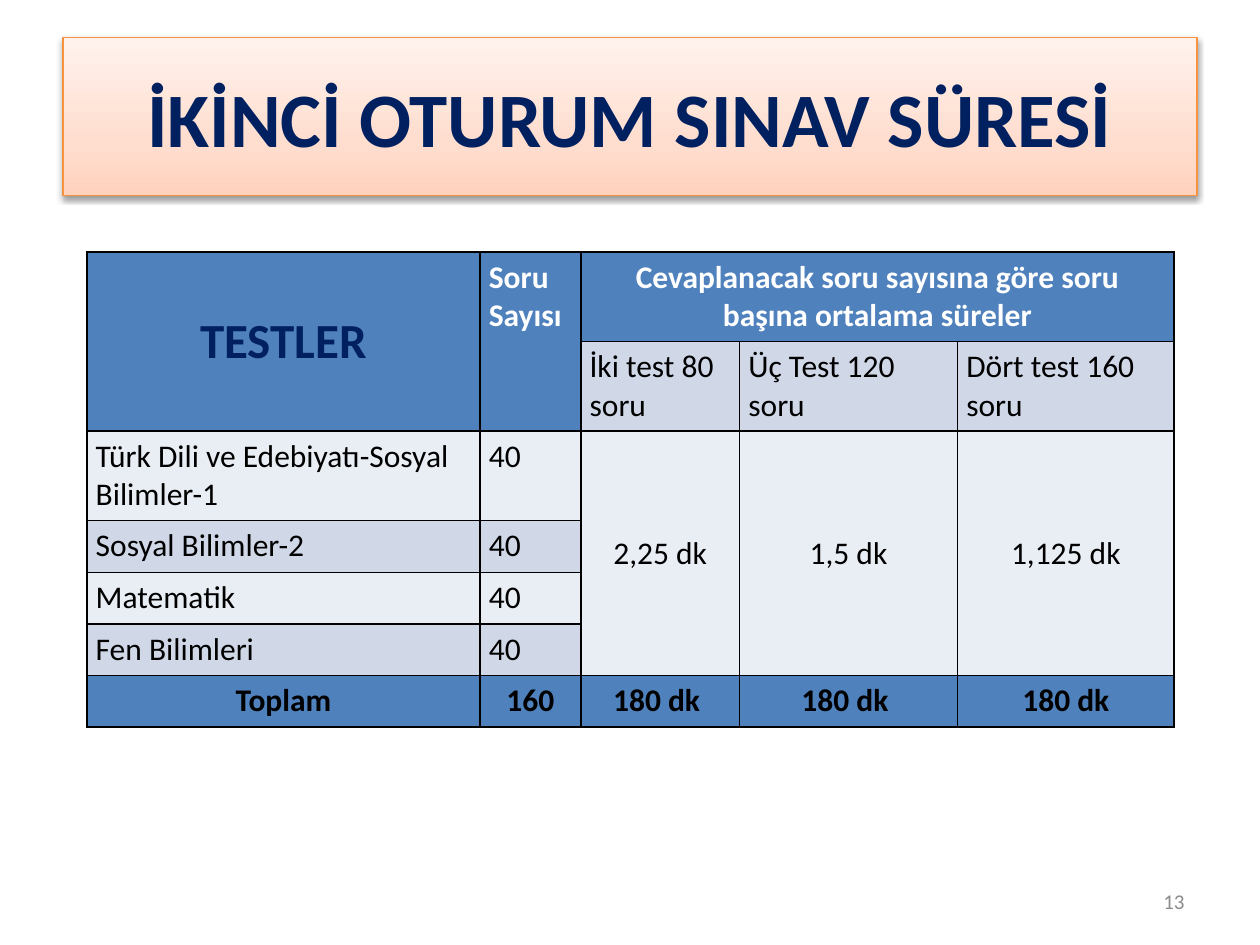
from lxml import etree
from pptx import Presentation
from pptx.dml.color import RGBColor
from pptx.enum.text import MSO_ANCHOR, PP_ALIGN
from pptx.oxml import parse_xml
from pptx.oxml.ns import nsdecls, qn
from pptx.util import Inches, Pt

LEFT, CENTER, RIGHT = PP_ALIGN.LEFT, PP_ALIGN.CENTER, PP_ALIGN.RIGHT
TOP, MIDDLE = MSO_ANCHOR.TOP, MSO_ANCHOR.MIDDLE
FONT = "Calibri"
COLORS = {
    "navy": "002060", "header": "4F81BD", "dark_band": "D0D8E8",
    "light_band": "E9EDF4", "white": "FFFFFF", "black": "000000",
    "orange": "F69240", "gray": "8C8C8C",
}
TITLE = "İKİNCİ OTURUM SINAV SÜRESİ"
TITLE_STOPS = [(0, "FFD2BD"), (35, "FFDED0"), (100, "FFF2ED")]
PAGE_NUMBER = "13"

ROWS = [
    ["TESTLER", "Soru Sayısı",
     "Cevaplanacak soru sayısına göre soru başına ortalama süreler", None, None],
    [None, None, "İki test 80 soru", "Üç Test 120 soru", "Dört test 160 soru"],
    ["Türk Dili ve Edebiyatı-Sosyal Bilimler-1", "40",
     "2,25 dk", "1,5 dk", "1,125 dk"],
    ["Sosyal Bilimler-2", "40", None, None, None],
    ["Matematik", "40", None, None, None],
    ["Fen Bilimleri", "40", None, None, None],
    ["Toplam", "160", "180 dk ", "180 dk ", "180 dk"],
]
MERGES = [((0, 0), (1, 0)), ((0, 1), (1, 1)), ((0, 2), (0, 4))]
MERGES += [((2, col), (5, col)) for col in (2, 3, 4)]
COL_WIDTHS = [3.12, 0.8, 1.26, 1.73, 1.72]
ROW_HEIGHTS = [0.71] * 3 + [0.41] * 4
LAST = len(ROWS) - 1


def add_text(tf, text, size, color, bold=False, align=LEFT):
    p = tf.paragraphs[0]
    p.alignment = align
    r = p.add_run()
    r.text = text
    r.font.name = FONT
    r.font.size = Pt(size)
    r.font.bold = bold
    r.font.color.rgb = RGBColor.from_string(COLORS[color])


def add_borders(cell):
    tcPr = cell._tc.get_or_add_tcPr()
    for side in ("lnL", "lnR", "lnT", "lnB"):
        ln = etree.SubElement(tcPr, qn(f"a:{side}"), w=str(Pt(1)))
        fill = etree.SubElement(ln, qn("a:solidFill"))
        etree.SubElement(fill, qn("a:srgbClr"), val=COLORS["black"])


def cell_style(row, col):
    if (row, col) == (0, 0):
        return "header", 28, "navy", True, CENTER, MIDDLE
    if row == 0:
        return "header", 18, "white", True, CENTER if col == 2 else LEFT, TOP
    if row == LAST:
        return "header", 18, "black", True, CENTER, TOP
    band = "dark_band" if row % 2 else "light_band"
    if row > 1 and col > 1:
        return band, 18, "black", False, CENTER, MIDDLE
    return band, 18, "black", False, LEFT, TOP


def format_title(s):
    s.left, s.top, s.width, s.height = map(Inches, (0.5, 0.3, 9, 1.25))
    stops = "".join(
        f'<a:gs pos="{pos * 1000}"><a:srgbClr val="{color}"/></a:gs>'
        for pos, color in TITLE_STOPS)
    spPr = s._element.spPr
    spPr.append(parse_xml(
        f'<a:gradFill {nsdecls("a")} rotWithShape="1"><a:gsLst>{stops}</a:gsLst>'
        '<a:lin ang="16200000" scaled="1"/></a:gradFill>'))
    s.line.color.rgb = RGBColor.from_string(COLORS["orange"])
    s.line.width = Pt(0.75)
    spPr.append(parse_xml(
        f'<a:effectLst {nsdecls("a")}><a:outerShdw blurRad="{Pt(3.1)}" '
        f'dist="{Pt(1.6)}" dir="5400000" rotWithShape="0">'
        f'<a:srgbClr val="{COLORS["black"]}"><a:alpha val="38000"/></a:srgbClr>'
        '</a:outerShdw></a:effectLst>'))
    s.text_frame.vertical_anchor = MIDDLE
    add_text(s.text_frame, TITLE, 44, "navy", True, CENTER)


def add_exam_table(slide):
    table = slide.shapes.add_table(
        len(ROWS), len(COL_WIDTHS), Inches(0.69), Inches(2),
        Inches(sum(COL_WIDTHS)), Inches(sum(ROW_HEIGHTS))).table
    table.first_row = table.horz_banding = False
    for column, width in zip(table.columns, COL_WIDTHS):
        column.width = Inches(width)
    for row, height in zip(table.rows, ROW_HEIGHTS):
        row.height = Inches(height)
    for start, end in MERGES:
        table.cell(*start).merge(table.cell(*end))
    for i, texts in enumerate(ROWS):
        for j, text in enumerate(texts):
            cell = table.cell(i, j)
            fill, size, color, bold, align, anchor = cell_style(i, j)
            add_borders(cell)
            cell.fill.solid()
            cell.fill.fore_color.rgb = RGBColor.from_string(COLORS[fill])
            cell.margin_left = cell.margin_right = Inches(0.07)
            cell.margin_top = cell.margin_bottom = Inches(0.05)
            cell.vertical_anchor = anchor
            if text:
                add_text(cell.text_frame, text, size, color, bold, align)


def main():
    prs = Presentation()
    prs.slide_width, prs.slide_height = Inches(10), Inches(7.5)
    slide = prs.slides.add_slide(prs.slide_layouts[5])
    format_title(slide.shapes.title)
    add_exam_table(slide)
    number = slide.shapes.add_textbox(
        Inches(7.17), Inches(6.95), Inches(2.33), Inches(0.4))
    tf = number.text_frame
    tf.word_wrap = True
    tf.vertical_anchor = MIDDLE
    add_text(tf, PAGE_NUMBER, 12, "gray", align=RIGHT)
    prs.save("out.pptx")


if __name__ == "__main__":
    main()
